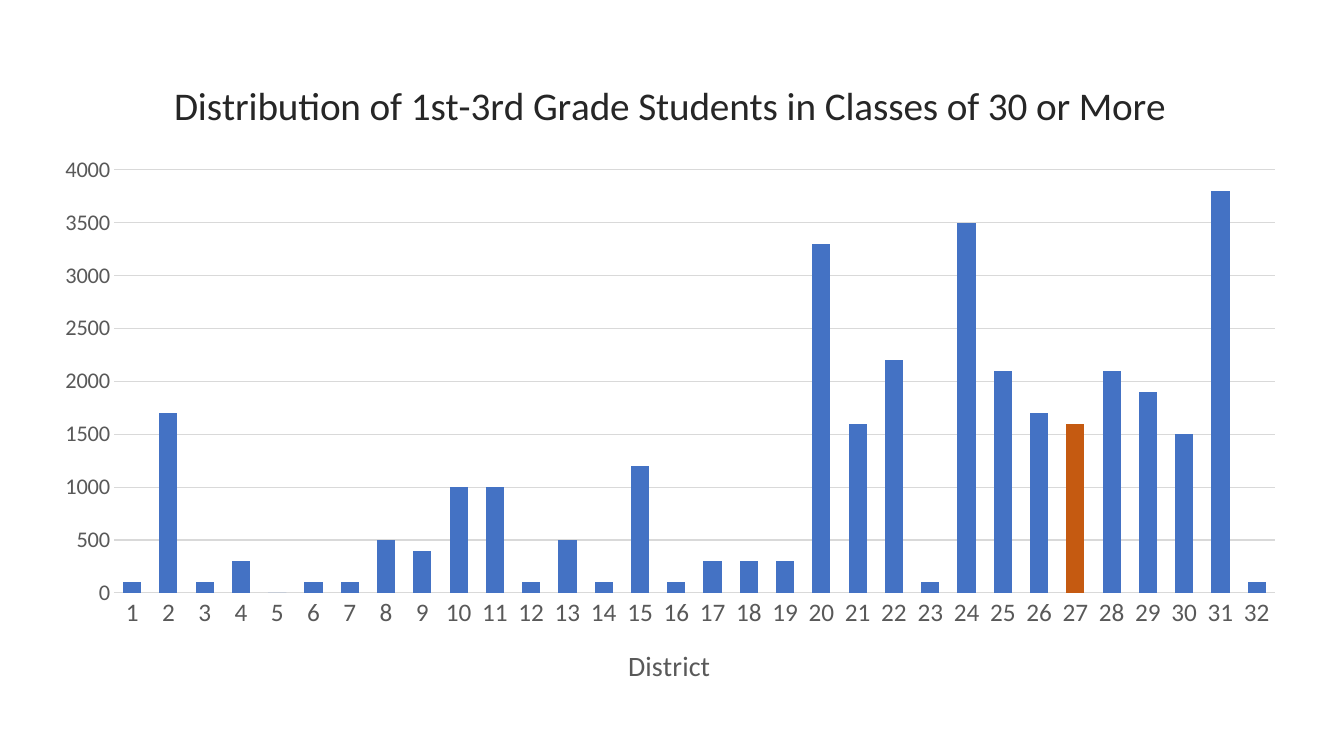
from dataclasses import dataclass

from lxml.etree import SubElement
from pptx import Presentation
from pptx.chart.axis import CategoryAxis, ValueAxis
from pptx.chart.chart import Chart
from pptx.chart.data import CategoryChartData
from pptx.dml.color import RGBColor
from pptx.enum.chart import XL_CHART_TYPE, XL_TICK_MARK
from pptx.oxml.ns import qn
from pptx.oxml.xmlchemy import BaseOxmlElement
from pptx.text.text import Font, TextFrame
from pptx.util import Emu, Pt

PX_PER_INCH = 100.8
FONT_NAME = "Calibri"
BLUE, ORANGE = "4472C4", "C55A11"
GRID_GREY, LABEL_GREY, TITLE_GREY = "D9D9D9", "595959", "262626"
HIGHLIGHTED_DISTRICT = 27
STUDENTS = (
    100, 1700, 100, 300, 0, 100, 100, 500,
    400, 1000, 1000, 100, 500, 100, 1200, 100,
    300, 300, 300, 3300, 1600, 2200, 100, 3500,
    2100, 1700, 1600, 2100, 1900, 1500, 3800, 100,
)


@dataclass(frozen=True)
class Box:
    left: int
    top: int
    width: int = 0
    height: int = 0


@dataclass(frozen=True)
class Title:
    text: str
    size: int
    color: str
    place: Box


CHART_BOX = Box(39, 54, 1260, 655)
PLOT_BOX = Box(114, 170, 1161, 423)
CHART_TITLE = Title("Distribution of 1st-3rd Grade Students in Classes of 30 or More",
                    28, TITLE_GREY, Box(167, 72))
DISTRICT_TITLE = Title("District", 20, LABEL_GREY, Box(623, 641))


def px(length: int) -> Emu:
    return Emu(round(length * 914400 / PX_PER_INCH))


def rgb(color: str) -> RGBColor:
    return RGBColor.from_string(color)


def style_font(font: Font, size: int, color: str) -> None:
    font.name = FONT_NAME
    font.size = Pt(size)
    font.bold = False
    font.color.rgb = rgb(color)


def place_in_chart(element: BaseOxmlElement, box: Box, index: int) -> None:
    existing = element.find(qn("c:layout"))
    if existing is not None:
        element.remove(existing)
    layout = element.makeelement(qn("c:layout"))
    element.insert(index, layout)
    manual = SubElement(layout, qn("c:manualLayout"))
    settings = {"xMode": "edge", "yMode": "edge",
                "x": (box.left - CHART_BOX.left) / CHART_BOX.width,
                "y": (box.top - CHART_BOX.top) / CHART_BOX.height}
    if box.width:
        settings = {"layoutTarget": "inner", **settings,
                    "w": box.width / CHART_BOX.width,
                    "h": box.height / CHART_BOX.height}
    for name, value in settings.items():
        SubElement(manual, qn(f"c:{name}")).set("val", str(value))


def write_title(text_frame: TextFrame, title: Title) -> None:
    text_frame.text = title.text
    style_font(text_frame.paragraphs[0].runs[0].font, title.size, title.color)


def style_axis(axis: CategoryAxis | ValueAxis, size: int) -> None:
    axis.major_tick_mark = XL_TICK_MARK.NONE
    axis.minor_tick_mark = XL_TICK_MARK.NONE
    style_font(axis.tick_labels.font, size, LABEL_GREY)


def style_axes(chart: Chart) -> None:
    districts, students = chart.category_axis, chart.value_axis
    style_axis(districts, 18)
    style_axis(students, 16)
    students.minimum_scale = 0
    students.maximum_scale = 4000
    students.major_unit = 500
    students.has_major_gridlines = True
    students.format.line.fill.background()
    for line in (districts.format.line, students.major_gridlines.format.line):
        line.color.rgb = rgb(GRID_GREY)
        line.width = Pt(0.75)


def style_bars(chart: Chart) -> None:
    plot = chart.plots[0]
    plot.gap_width = 100
    plot.vary_by_categories = False
    series = plot.series[0]
    highlighted = series.points[HIGHLIGHTED_DISTRICT - 1]
    for bars, color in ((series, BLUE), (highlighted, ORANGE)):
        bars.format.fill.solid()
        bars.format.fill.fore_color.rgb = rgb(color)


def main() -> None:
    presentation = Presentation()
    presentation.slide_width, presentation.slide_height = px(1344), px(756)
    slide = presentation.slides.add_slide(presentation.slide_layouts[6])

    data = CategoryChartData()
    data.categories = [str(district) for district in range(1, len(STUDENTS) + 1)]
    data.add_series("Series 1", STUDENTS)
    chart = slide.shapes.add_chart(
        XL_CHART_TYPE.COLUMN_CLUSTERED, px(CHART_BOX.left), px(CHART_BOX.top),
        px(CHART_BOX.width), px(CHART_BOX.height), data).chart
    chart.has_legend = False
    style_font(chart.font, 16, "000000")
    style_axes(chart)
    style_bars(chart)

    chart.has_title = True
    chart.category_axis.has_title = True
    for holder, title in ((chart.chart_title, CHART_TITLE),
                          (chart.category_axis.axis_title, DISTRICT_TITLE)):
        write_title(holder.text_frame, title)
        place_in_chart(holder._element, title.place, 1)
    place_in_chart(chart._chartSpace.chart.plotArea, PLOT_BOX, 0)

    presentation.save("out.pptx")


if __name__ == "__main__":
    main()
